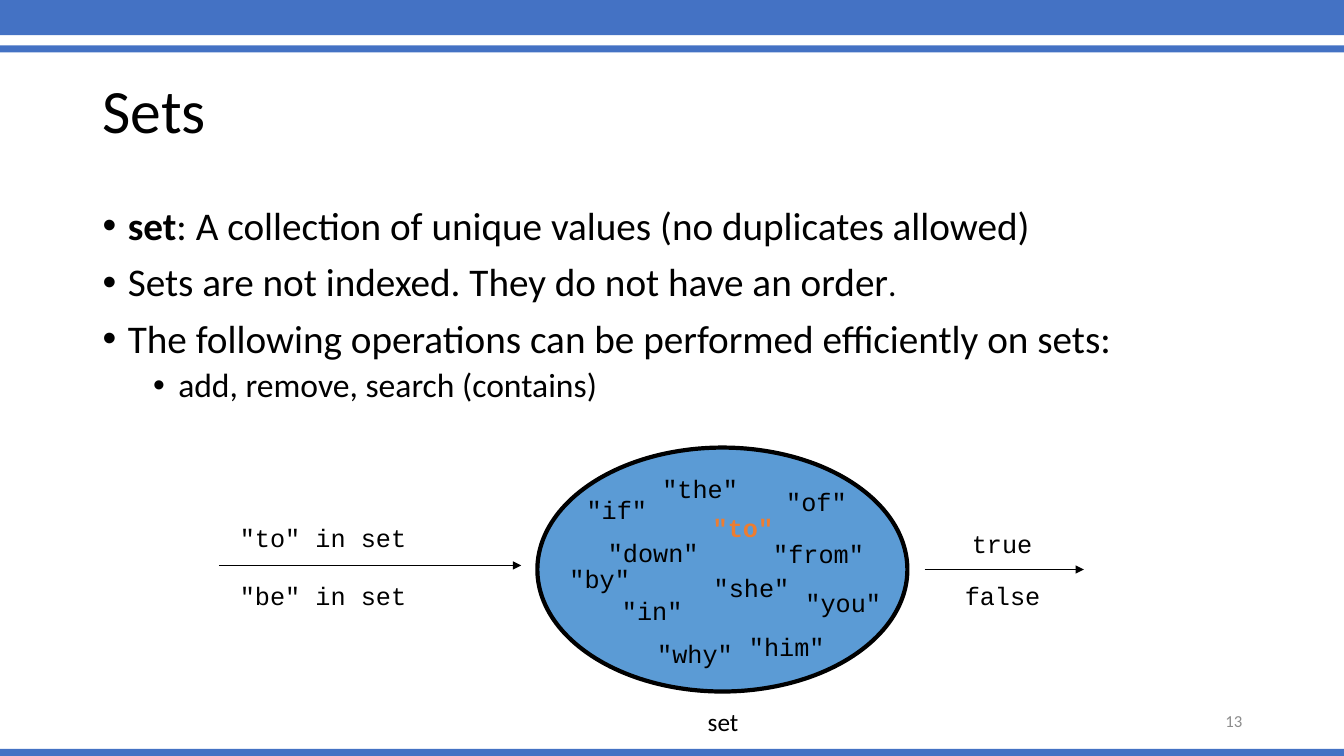
from typing import NamedTuple

from lxml import etree
from pptx import Presentation
from pptx.dml.color import RGBColor
from pptx.enum.shapes import MSO_CONNECTOR, MSO_SHAPE
from pptx.enum.text import MSO_ANCHOR, PP_ALIGN
from pptx.oxml.ns import qn
from pptx.slide import Slide
from pptx.text.text import TextFrame
from pptx.util import Inches, Pt

RECTANGLE, ELLIPSE = MSO_SHAPE.RECTANGLE, MSO_SHAPE.OVAL
STRAIGHT = MSO_CONNECTOR.STRAIGHT
TOP, MIDDLE = MSO_ANCHOR.TOP, MSO_ANCHOR.MIDDLE
LEFT, RIGHT = PP_ALIGN.LEFT, PP_ALIGN.RIGHT

BLACK = RGBColor(0x00, 0x00, 0x00)
BAND_BLUE = RGBColor(0x44, 0x72, 0xC4)
SET_BLUE = RGBColor(0x5B, 0x9B, 0xD5)
ORANGE = RGBColor(0xED, 0x7D, 0x31)
GRAY = RGBColor(0x8C, 0x8C, 0x8C)

BODY_FONT, CODE_FONT = "Calibri", "Courier New"
SLIDE_WIDTH = 13.33
LABEL_HEIGHT = 0.4
CODE_CHAR_WIDTH, LABEL_MARGINS = 0.15, 0.2


class Band(NamedTuple):
    top: float
    height: float


class Run(NamedTuple):
    text: str
    size: float
    font: str = BODY_FONT
    color: RGBColor = BLACK
    bold: bool = False


class Bullet(NamedTuple):
    runs: list[Run]
    level: int = 0
    indent: float = 0.25
    space_before: float = 10


class CodeLabel(NamedTuple):
    text: str
    left: float
    top: float
    color: RGBColor = BLACK
    bold: bool = False


class Arrow(NamedTuple):
    start: float
    end: float
    y: float


BANDS = [Band(-0.03, 0.38), Band(0.45, 0.07), Band(7.43, 0.07)]

BULLETS = [
    Bullet([Run("set", 28, bold=True),
            Run(": A collection of unique values (no duplicates allowed)", 28)]),
    Bullet([Run("Sets are not indexed. They do not have an order", 28),
            Run(".", 24)], level=1),
    Bullet([Run("The following operations can be performed efficiently on sets:", 28)]),
    Bullet([Run("add, remove, search (contains)", 24)],
           level=1, indent=0.75, space_before=5),
]

ARROWS = [Arrow(2.17, 5.17, 5.61), Arrow(9.17, 10.75, 5.65)]

CODE_LABELS = [
    # Queries and their results
    CodeLabel('"to" in set', 2.28, 5.13),
    CodeLabel('"be" in set', 2.28, 5.71),
    CodeLabel("true", 9.54, 5.19),
    CodeLabel("false", 9.47, 5.71),
    # Members of the set
    CodeLabel('"the"', 6.47, 4.65),
    CodeLabel('"of"', 7.7, 4.78),
    CodeLabel('"from"', 7.57, 5.29),
    CodeLabel('"to"', 6.97, 5.03, ORANGE, True),
    CodeLabel('"she"', 6.98, 5.63),
    CodeLabel('"you"', 7.89, 5.78),
    CodeLabel('"him"', 7.33, 6.21),
    CodeLabel('"why"', 6.42, 6.28),
    CodeLabel('"in"', 6.07, 5.86),
    CodeLabel('"down"', 5.93, 5.28),
    CodeLabel('"by"', 5.55, 5.54),
    CodeLabel('"if"', 5.72, 4.86),
]


def add_frame(slide: Slide, left: float, top: float, width: float, height: float,
              anchor: MSO_ANCHOR = TOP, wrap: bool = True) -> TextFrame:
    box = slide.shapes.add_textbox(
        Inches(left), Inches(top), Inches(width), Inches(height))
    frame = box.text_frame
    frame.word_wrap = wrap
    frame.vertical_anchor = anchor
    return frame


def add_run(paragraph, content: Run) -> None:
    run = paragraph.add_run()
    run.text = content.text
    run.font.name = content.font
    run.font.size = Pt(content.size)
    run.font.bold = content.bold
    run.font.color.rgb = content.color


def add_line_of_text(frame: TextFrame, content: Run, align: PP_ALIGN = LEFT,
                     line_spacing: float = 1.0) -> None:
    paragraph = frame.paragraphs[0]
    paragraph.alignment = align
    paragraph.line_spacing = line_spacing
    add_run(paragraph, content)


def add_band(slide: Slide, band: Band) -> None:
    bar = slide.shapes.add_shape(
        RECTANGLE, 0, Inches(band.top), Inches(SLIDE_WIDTH), Inches(band.height))
    bar.shadow.inherit = False
    bar.fill.solid()
    bar.fill.fore_color.rgb = BAND_BLUE
    bar.line.fill.background()


def add_bullets(frame: TextFrame, bullets: list[Bullet]) -> None:
    for index, bullet in enumerate(bullets):
        paragraph = frame.add_paragraph() if index else frame.paragraphs[0]
        paragraph.level = bullet.level
        paragraph.line_spacing = 0.9
        paragraph.space_before = Pt(bullet.space_before)
        properties = paragraph._p.get_or_add_pPr()
        properties.set("marL", str(Inches(bullet.indent)))
        properties.set("indent", str(Inches(-0.25)))
        etree.SubElement(properties, qn("a:buFont"), typeface="Arial")
        etree.SubElement(properties, qn("a:buChar"), char="•")
        for content in bullet.runs:
            add_run(paragraph, content)


def add_set_ellipse(slide: Slide) -> None:
    ellipse = slide.shapes.add_shape(
        ELLIPSE, Inches(5.33), Inches(4.44), Inches(3.67), Inches(2.42))
    ellipse.shadow.inherit = False
    ellipse.fill.solid()
    ellipse.fill.fore_color.rgb = SET_BLUE
    ellipse.line.color.rgb = BLACK
    ellipse.line.width = Pt(3)


def add_arrow(slide: Slide, arrow: Arrow) -> None:
    connector = slide.shapes.add_connector(
        STRAIGHT, Inches(arrow.start), Inches(arrow.y), Inches(arrow.end), Inches(arrow.y))
    connector.line.color.rgb = BLACK
    connector.line.width = Pt(0.75)
    etree.SubElement(connector.line._get_or_add_ln(), qn("a:tailEnd"), type="triangle")
    etree.SubElement(connector._element.spPr, qn("a:effectLst"))


def add_code_label(slide: Slide, label: CodeLabel) -> None:
    width = len(label.text) * CODE_CHAR_WIDTH + LABEL_MARGINS
    frame = add_frame(slide, label.left, label.top, width, LABEL_HEIGHT, wrap=False)
    add_line_of_text(frame, Run(label.text, 18, CODE_FONT, label.color, label.bold))


def main() -> None:
    presentation = Presentation()
    presentation.slide_width = Inches(SLIDE_WIDTH)
    presentation.slide_height = Inches(7.5)
    slide = presentation.slides.add_slide(presentation.slide_layouts[6])

    # Bands, title and bullets
    for band in BANDS:
        add_band(slide, band)
    title = add_frame(slide, 0.92, 0.4, 11.5, 1.45, MIDDLE)
    add_line_of_text(title, Run("Sets", 44), line_spacing=0.9)
    add_bullets(add_frame(slide, 0.92, 2, 11.5, 4.76), BULLETS)

    # Set diagram
    add_set_ellipse(slide)
    for arrow in ARROWS:
        add_arrow(slide, arrow)
    for label in CODE_LABELS:
        add_code_label(slide, label)
    caption = add_frame(slide, 6.92, 6.96, 0.51, LABEL_HEIGHT, wrap=False)
    add_line_of_text(caption, Run("set", 18))

    # Slide number
    slide_number = add_frame(slide, 9.42, 6.95, 3, LABEL_HEIGHT, MIDDLE)
    add_line_of_text(slide_number, Run("13", 12, color=GRAY), RIGHT)

    presentation.save("out.pptx")


if __name__ == "__main__":
    main()
